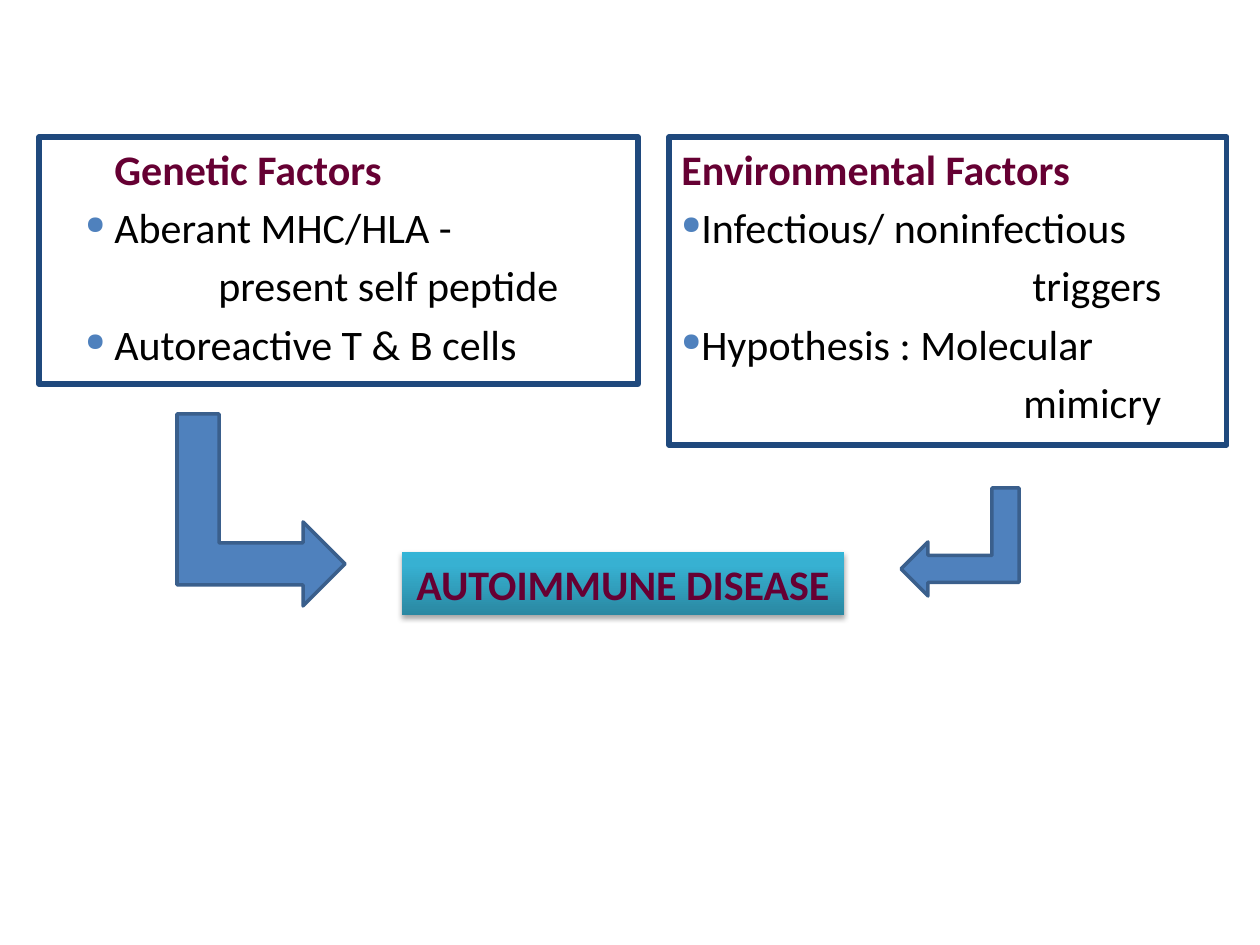
from lxml.etree import SubElement
from pptx import Presentation
from pptx.dml.color import RGBColor
from pptx.enum.shapes import MSO_SHAPE
from pptx.enum.text import MSO_ANCHOR, MSO_AUTO_SIZE, PP_ALIGN
from pptx.oxml import parse_xml
from pptx.oxml.ns import nsdecls, qn
from pptx.util import Pt

PX = 914400 // 126
COLORS = {
    "heading": "660033",
    "body": "000000",
    "frame": "1F497D",
    "accent": "4F81BD",
    "arrow_edge": "3A5F8C",
    "grad_dark": "2A88A2",
    "grad_mid": "37B1D2",
    "grad_light": "34B4D6",
}


def color(name):
    return RGBColor.from_string(COLORS[name])


def add_box(slide, preset, left, top, width, height, edge=None, weight=0):
    box = slide.shapes.add_shape(preset, left * PX, top * PX, width * PX, height * PX)
    box.shadow.inherit = False
    if edge:
        box.line.color.rgb = color(edge)
        box.line.width = Pt(weight)
    else:
        box.line.fill.background()
    return box


def style_text(paragraph, tint, bold):
    for run in paragraph.runs:
        run.font.name = "Calibri"
        run.font.size = Pt(24)
        run.font.bold = bold
        run.font.color.rgb = color(tint)


def add_bullet(paragraph):
    props = paragraph._p.get_or_add_pPr()
    tint = SubElement(props, qn("a:buClr"))
    SubElement(tint, qn("a:srgbClr"), val=COLORS["accent"])
    SubElement(props, qn("a:buSzPct"), val="60000")
    SubElement(props, qn("a:buChar"), char="●")


def add_factor_box(slide, bounds, heading, lines, hanging):
    box = add_box(slide, MSO_SHAPE.RECTANGLE, *bounds, edge="frame", weight=3)
    box.fill.background()
    frame = box.text_frame
    frame.word_wrap = True
    frame.auto_size = MSO_AUTO_SIZE.SHAPE_TO_FIT_TEXT
    frame.vertical_anchor = MSO_ANCHOR.TOP
    for index, (text, margin, bulleted) in enumerate([heading, *lines]):
        paragraph = frame.paragraphs[0] if index == 0 else frame.add_paragraph()
        paragraph.text = text
        paragraph.alignment = PP_ALIGN.LEFT
        paragraph.space_before = Pt(4.5)
        props = paragraph._p.get_or_add_pPr()
        props.set("marL", str(margin * PX))
        props.set("indent", str(-hanging * PX if bulleted else 0))
        if bulleted:
            add_bullet(paragraph)
        style_text(paragraph, "heading" if index == 0 else "body", index == 0)


def add_outcome(slide, bounds, text):
    outcome = add_box(slide, MSO_SHAPE.RECTANGLE, *bounds)
    stops = "".join(
        f'<a:gs pos="{position}"><a:srgbClr val="{COLORS[name]}"/></a:gs>'
        for position, name in ((0, "grad_dark"), (80000, "grad_mid"), (100000, "grad_light"))
    )
    gradient = parse_xml(
        f'<a:gradFill {nsdecls("a")} rotWithShape="1"><a:gsLst>{stops}</a:gsLst>'
        '<a:lin ang="16200000" scaled="0"/></a:gradFill>'
    )
    props = outcome._element.spPr
    props.find(qn("a:prstGeom")).addnext(gradient)
    shadow = SubElement(
        props.find(qn("a:effectLst")), qn("a:outerShdw"),
        blurRad=str(Pt(3.1)), dist=str(Pt(1.8)), dir="5400000", rotWithShape="0",
    )
    tint = SubElement(shadow, qn("a:srgbClr"), val="000000")
    SubElement(tint, qn("a:alpha"), val="35000")
    frame = outcome.text_frame
    frame.word_wrap = False
    frame.auto_size = MSO_AUTO_SIZE.SHAPE_TO_FIT_TEXT
    frame.vertical_anchor = MSO_ANCHOR.TOP
    frame.text = text
    frame.paragraphs[0].alignment = PP_ALIGN.CENTER
    style_text(frame.paragraphs[0], "heading", True)


def add_bent_arrow(slide, bounds, rotation, flipped=False):
    arrow = add_box(slide, MSO_SHAPE.BENT_UP_ARROW, *bounds, edge="arrow_edge", weight=2)
    arrow.fill.solid()
    arrow.fill.fore_color.rgb = color("accent")
    arrow.rotation = rotation
    if flipped:
        arrow._element.spPr.find(qn("a:xfrm")).set("flipH", "1")


def main():
    deck = Presentation()
    deck.slide_width, deck.slide_height = 1260 * PX, 945 * PX
    slide = deck.slides.add_slide(deck.slide_layouts[6])

    add_factor_box(
        slide, (39, 137, 599, 247), ("Genetic Factors", 63, False),
        [
            ("Aberant MHC/HLA -", 63, True),
            ("present self peptide", 167, False),
            ("Autoreactive T & B cells", 63, True),
        ],
        hanging=29,
    )
    add_factor_box(
        slide, (669, 137, 558, 308), ("Environmental Factors", 0, False),
        [
            ("Infectious/ noninfectious", 0, True),
            ("triggers", 351, False),
            ("Hypothesis : Molecular", 0, True),
            ("mimicry", 342, False),
        ],
        hanging=0,
    )
    add_outcome(slide, (402, 552, 442, 63), "AUTOIMMUNE DISEASE")
    add_bent_arrow(slide, (165, 426, 192, 168), 90)
    add_bent_arrow(slide, (906, 483, 108, 118), 270, flipped=True)

    deck.save("out.pptx")


if __name__ == "__main__":
    main()
